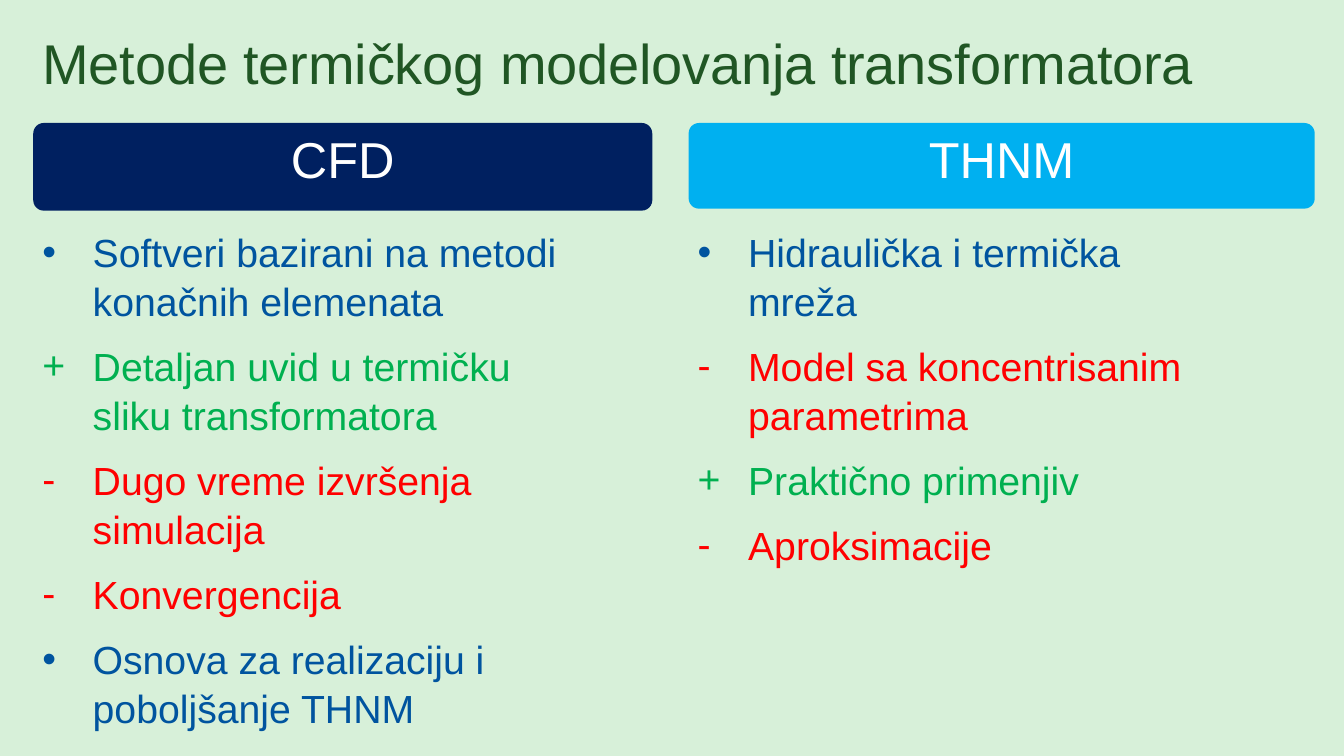
from dataclasses import dataclass

from lxml import etree
from pptx import Presentation
from pptx import util as u
from pptx.dml.color import RGBColor
from pptx.enum import shapes, text
from pptx.oxml import ns


@dataclass(frozen=True)
class Theme:
    font: str = "Arial"
    background: str = "D7F0D9"
    title: str = "205624"
    header_text: str = "FFFFFF"
    cfd: str = "002060"
    thnm: str = "00B0F0"
    neutral: str = "00549F"
    advantage: str = "00B050"
    drawback: str = "FF0000"
    title_size: int = 40
    header_size: int = 36
    body_size: int = 28


THEME = Theme()
ITEM_COLORS = {"•": THEME.neutral, "+": THEME.advantage, "-": THEME.drawback}

# Each method: header, fill, left, width, header height, list height, items
METHODS = [
    ("CFD", THEME.cfd, 0.33, 6.14, 0.87, 5.43, [
        ("•", "Softveri bazirani na metodi konačnih elemenata"),
        ("+", "Detaljan uvid u termičku sliku transformatora"),
        ("-", "Dugo vreme izvršenja simulacija"),
        ("-", "Konvergencija"),
        ("•", "Osnova za realizaciju i poboljšanje THNM"),
    ]),
    ("THNM", THEME.thnm, 6.83, 6.21, 0.85, 3.86, [
        ("•", "Hidraulička i termička mreža"),
        ("-", "Model sa koncentrisanim parametrima"),
        ("+", "Praktično primenjiv"),
        ("-", "Aproksimacije"),
    ]),
]


def box(left, top, width, height):
    return [u.Inches(length) for length in (left, top, width, height)]


def set_up_frame(frame, left=0, top=0, right=0):
    frame.word_wrap = True
    frame.vertical_anchor = text.MSO_ANCHOR.TOP
    frame.margin_left, frame.margin_top = u.Inches(left), u.Inches(top)
    frame.margin_right, frame.margin_bottom = u.Inches(right), 0


def write(paragraph, words, size, color):
    paragraph.text = words
    font = paragraph.runs[0].font
    font.name = THEME.font
    font.size = u.Pt(size)
    font.color.rgb = RGBColor.from_string(color)


def add_bullet(paragraph, mark):
    properties = paragraph._p.get_or_add_pPr()
    properties.set("marL", str(u.Inches(0.59)))
    properties.set("indent", str(u.Inches(-0.5)))
    etree.SubElement(properties, ns.qn("a:buFont"), typeface=THEME.font)
    etree.SubElement(properties, ns.qn("a:buChar"), char=mark)
    tabs = etree.SubElement(properties, ns.qn("a:tabLst"))
    etree.SubElement(tabs, ns.qn("a:tab"), pos=str(u.Inches(0.28)), algn="l")


def add_title(slide, words):
    title = slide.shapes.add_textbox(*box(0.33, 0.17, 12.05, 0.77)).text_frame
    set_up_frame(title, left=0.09, top=0.11)
    write(title.paragraphs[0], words, THEME.title_size, THEME.title)
    title.paragraphs[0].runs[0]._r.get_or_add_rPr().set("spc", "-10")


def add_header(slide, words, fill, left, width, height):
    header = slide.shapes.add_shape(
        shapes.MSO_SHAPE.ROUNDED_RECTANGLE, *box(left, 1.22, width, height))
    header.adjustments[0] = 0.12
    header.shadow.inherit = False
    header.fill.solid()
    header.fill.fore_color.rgb = RGBColor.from_string(fill)
    header.line.fill.background()
    set_up_frame(header.text_frame, top=0.02)
    paragraph = header.text_frame.paragraphs[0]
    write(paragraph, words, THEME.header_size, THEME.header_text)
    paragraph.alignment = text.PP_ALIGN.CENTER


def add_items(slide, items, left, width, height):
    frame = slide.shapes.add_textbox(*box(left, 2.07, width, height)).text_frame
    set_up_frame(frame, top=0.18, right=0.85)
    for index, (mark, words) in enumerate(items):
        paragraph = frame.add_paragraph() if index else frame.paragraphs[0]
        add_bullet(paragraph, mark)
        write(paragraph, words, THEME.body_size, ITEM_COLORS[mark])
        paragraph.line_spacing = 1.04
        paragraph.space_before = u.Pt(11.4 if index else 0)


def main():
    deck = Presentation()
    deck.slide_width, deck.slide_height = u.Inches(13.33), u.Inches(7.5)
    slide = deck.slides.add_slide(deck.slide_layouts[6])
    slide.background.fill.solid()
    slide.background.fill.fore_color.rgb = RGBColor.from_string(THEME.background)

    add_title(slide, "Metode termičkog modelovanja transformatora")

    # One column per modelling method
    for name, fill, left, width, header_height, list_height, items in METHODS:
        add_header(slide, name, fill, left, width, header_height)
        add_items(slide, items, left, width, list_height)

    deck.save("out.pptx")


if __name__ == "__main__":
    main()
